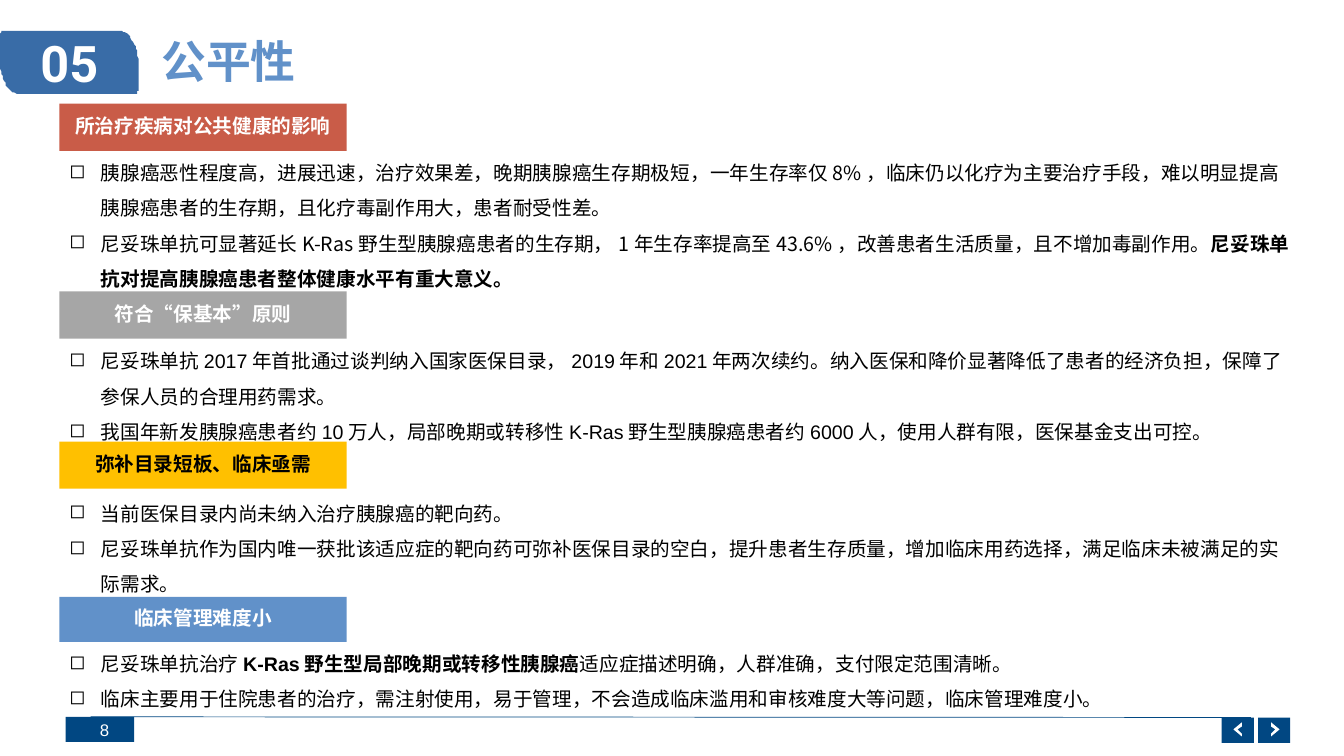
from lxml import etree
from pptx import Presentation
from pptx.dml.color import RGBColor
from pptx.enum.shapes import MSO_CONNECTOR, MSO_SHAPE
from pptx.enum.text import MSO_ANCHOR, MSO_AUTO_SIZE, PP_ALIGN
from pptx.oxml.ns import qn
from pptx.util import Pt

RECTANGLE = MSO_SHAPE.RECTANGLE
STRAIGHT = MSO_CONNECTOR.STRAIGHT
MIDDLE, TOP = MSO_ANCHOR.MIDDLE, MSO_ANCHOR.TOP
LEFT, CENTER, RIGHT = PP_ALIGN.LEFT, PP_ALIGN.CENTER, PP_ALIGN.RIGHT
GROW = MSO_AUTO_SIZE.SHAPE_TO_FIT_TEXT
TITLE_ONLY_LAYOUT = 5

LATIN, CJK, BADGE_FONT = "Arial", "Noto Sans CJK SC", "Roboto"
NAVY, BLUE, WHITE, BLACK = "014782", "6191C9", "FFFFFF", "000000"
PLAIN, BOLD, NOTO = {}, {"bold": True}, {"font": CJK}

CONTENT_LEFT = 42.5
# label, fill, label colour, label top, label height, body top, body height, bullets
SECTIONS = [
    ("所治疗疾病对公共健康的影响", "C95C48", WHITE, 74, 33.8, 103, 108.7, [
        [("胰腺癌恶性程度高，进展迅速，治疗效果差，晚期胰腺癌生存期极短", PLAIN),
         ("，一年生存率仅8%，", NOTO),
         ("临床仍以化疗为主要治疗手段，难以明显提高胰腺癌患者的生存期，"
          "且化疗毒副作用大，患者耐受性差。", PLAIN)],
        [("尼妥珠单抗可显著延长K-Ras野生型胰腺癌患者的生存期，1年生存率提高至43.6%，"
          "改善患者生活质量，且不增加毒副作用。", NOTO),
         ("尼妥珠单抗对提高胰腺癌患者整体健康水平有重大意义。", {**NOTO, **BOLD})],
    ]),
    ("符合“保基本”原则", "A6A6A6", WHITE, 208.2, 33.8, 237.6, 83.5, [
        [("尼妥珠单抗2017年首批通过谈判纳入国家医保目录，2019年和2021年两次续约。"
          "纳入医保和降价显著降低了患者的经济负担，保障了参保人员的合理用药需求。", PLAIN)],
        [("我国年新发胰腺癌患者约10万人，局部晚期或转移性K-Ras野生型胰腺癌患者约6000人，"
          "使用人群有限，医保基⾦⽀出可控。", PLAIN)],
    ]),
    ("弥补目录短板、临床亟需", "FFC000", BLACK, 315.5, 33.5, 346.3, 80.6, [
        [("当前医保目录内尚未纳入治疗胰腺癌的靶向药。", PLAIN)],
        [("尼妥珠单抗作为国内唯一获批该适应症的靶向药可弥补医保目录的空白，提升患者生存质量，"
          "增加临床用药选择，满足临床未被满足的实际需求。", PLAIN)],
    ]),
    ("临床管理难度小", BLUE, WHITE, 426.3, 32.2, 453.6, 83.5, [
        [("尼妥珠单抗治疗", NOTO),
         ("K-Ras野生型局部晚期或转移性胰腺癌", BOLD),
         ("适应症描述明确，人群准确，支付限定范围清晰", PLAIN),
         ("。", NOTO)],
        [("临床主要用于住院患者的治疗，需注射使用，易于管理，不会造成临床滥用和审核难度大等问题，"
          "临床管理难度小。", PLAIN)],
    ]),
]


def color(hex_string):
    return RGBColor.from_string(hex_string)


def paint(shape, fill):
    shape.shadow.inherit = False
    shape.fill.solid()
    shape.fill.fore_color.rgb = color(fill)
    shape.line.fill.background()
    return shape


def add_run(paragraph, text, size=14, font=LATIN, text_color=BLACK, bold=False):
    run = paragraph.add_run()
    run.text = text
    run.font.size = Pt(size)
    run.font.name = font
    run.font.bold = bold
    run.font.color.rgb = color(text_color)
    east_asian = etree.Element(qn("a:ea"), typeface=CJK)
    run.font._element.find(qn("a:latin")).addnext(east_asian)


def write(shape, text, align=LEFT, anchor=MIDDLE, margins=(7.2, 3.6),
          line_spacing=None, space_after=0, **run_format):
    """Fill a shape with a single formatted paragraph."""
    frame = shape.text_frame
    frame.word_wrap = True
    frame.vertical_anchor = anchor
    frame.margin_left = frame.margin_right = Pt(margins[0])
    frame.margin_top = frame.margin_bottom = Pt(margins[1])
    paragraph = frame.paragraphs[0]
    paragraph.alignment = align
    paragraph.line_spacing = line_spacing
    paragraph.space_after = Pt(space_after)
    add_run(paragraph, text, **run_format)


def add_box(slide, left, top, width, height, fill):
    shape = slide.shapes.add_shape(RECTANGLE, Pt(left), Pt(top), Pt(width), Pt(height))
    return paint(shape, fill)


def add_outline(slide, points, fill):
    builder = slide.shapes.build_freeform(*points[0], scale=Pt(1))
    builder.add_line_segments(points[1:], close=True)
    return paint(builder.convert_to_shape(), fill)


def curve(start, control_1, control_2, end, steps=10):
    """Points along a cubic Bezier curve, both ends included."""
    return [tuple((1 - t) ** 3 * a + 3 * (1 - t) ** 2 * t * b + 3 * (1 - t) * t ** 2 * c + t ** 3 * d
                  for a, b, c, d in zip(start, control_1, control_2, end))
            for t in (step / steps for step in range(steps + 1))]


def add_badge(slide, text):
    width, top, height = 98.8, 21.8, 45.6
    bottom = top + height
    right_half = (
        curve((83, top), (88, top), (91.5, 24), (94.3, 28.6))
        + curve((94.3, 28.6), (97.4, 33.2), (width, 39), (width, 46.8))
        + curve((width, 63.4), (width, 66), (97.4, bottom), (95.6, bottom)))
    left_half = [(width - x, top + bottom - y) for x, y in right_half]
    badge = add_outline(slide, right_half + left_half, "396CA7")
    write(badge, text, align=CENTER, margins=(0, 0), size=36, font=BADGE_FONT,
          text_color=WHITE, bold=True)


def add_navigation(slide):
    line = slide.shapes.add_connector(STRAIGHT, Pt(64.8), Pt(512), Pt(893.5), Pt(512.5))
    line.line.color.rgb = color(NAVY)
    line.line.width = Pt(0.5)
    etree.SubElement(line._element.spPr, qn("a:effectLst"))
    chevron = [(-3.2, -5.1), (-3.2, -2.4), (0, 0), (-3.2, 2.4), (-3.2, 5.1), (3.2, 0)]
    for left, direction in ((872.6, -1), (898.6, 1)):
        add_box(slide, left, 512.6, 23, 18, NAVY)
        center = left + 11.9 + direction * 0.4
        add_outline(slide, [(center + direction * x, 521.4 + y) for x, y in chevron], WHITE)
    add_box(slide, 46.8, 512, 49, 18, NAVY)
    number = slide.shapes.add_textbox(Pt(43.2), Pt(512), Pt(41.8), Pt(18.7))
    write(number, "8", align=RIGHT, size=12, text_color=WHITE)


def add_bullets(slide, top, height, bullets):
    box = slide.shapes.add_textbox(Pt(CONTENT_LEFT), Pt(top), Pt(886.3), Pt(height))
    frame = box.text_frame
    frame.word_wrap = True
    frame.auto_size = GROW
    frame.vertical_anchor = TOP
    for index, runs in enumerate(bullets):
        paragraph = frame.add_paragraph() if index else frame.paragraphs[0]
        paragraph.line_spacing = 1.5
        properties = paragraph._p.get_or_add_pPr()
        indent = Pt(22.5)
        properties.set("marL", str(indent))
        properties.set("indent", str(-indent))
        etree.SubElement(properties, qn("a:buChar"), char="◻")
        for text, run_format in runs:
            add_run(paragraph, text, **run_format)


def add_title(slide, text):
    title = slide.shapes.title
    title.left, title.top, title.width, title.height = Pt(108), Pt(15.1), Pt(810.7), Pt(61.2)
    write(title, text, line_spacing=0.9, size=32, text_color=BLUE, bold=True)


def main():
    presentation = Presentation()
    presentation.slide_width, presentation.slide_height = Pt(960), Pt(540)
    slide = presentation.slides.add_slide(presentation.slide_layouts[TITLE_ONLY_LAYOUT])
    add_navigation(slide)
    add_title(slide, "公平性")
    add_badge(slide, "05")
    for label, fill, label_color, top, height, *_ in SECTIONS:
        box = add_box(slide, CONTENT_LEFT, top, 205.2, height, fill)
        write(box, label, align=CENTER, margins=(2, 1.5), line_spacing=0.9,
              space_after=5, text_color=label_color, bold=True)
    for *_, top, height, bullets in SECTIONS:
        add_bullets(slide, top, height, bullets)
    presentation.save("out.pptx")


if __name__ == "__main__":
    main()
